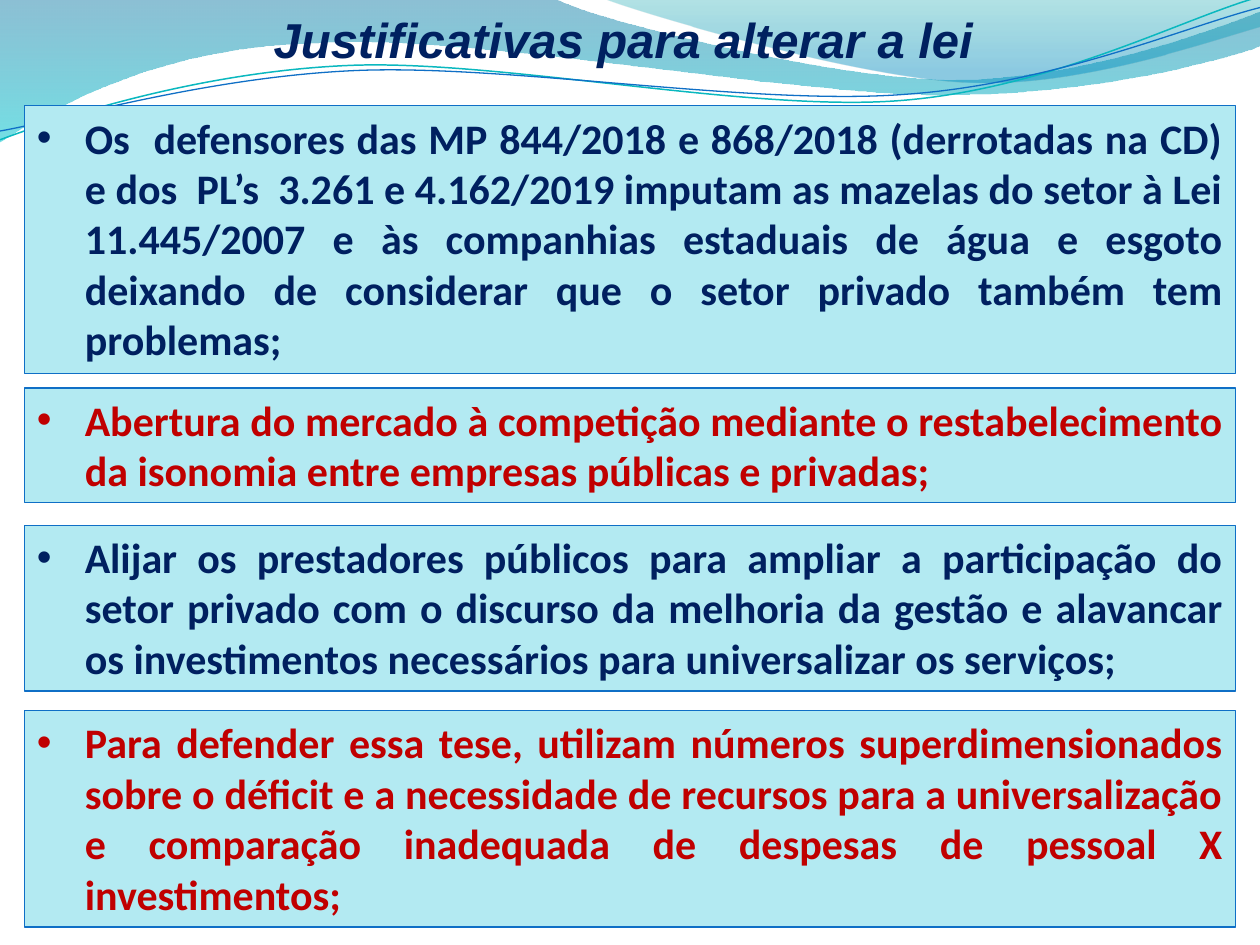
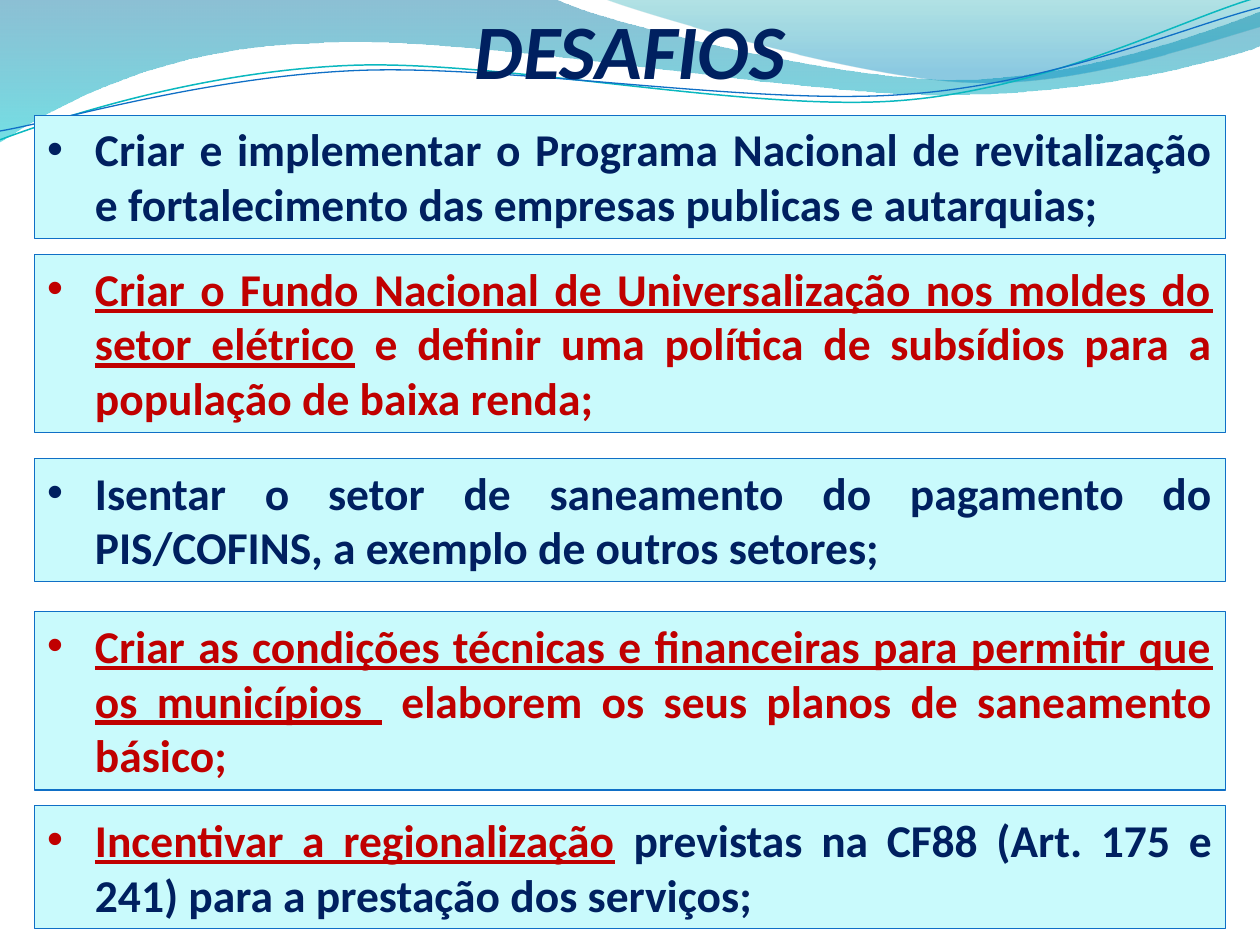
"""Build two slides on the sanitation law: reasons for change and challenges."""
from lxml.etree import SubElement as Sub
from pptx import Presentation
from pptx.dml.color import RGBColor as Rgb
from pptx.enum.shapes import MSO_SHAPE as Shape
from pptx.enum.text import MSO_ANCHOR as Anchor, MSO_AUTO_SIZE as Auto, PP_ALIGN as Align
from pptx.oxml.ns import qn
from pptx.util import Inches, Pt

COLS, ROWS = 100, 75
CELL = Inches(0.1)
INK = {
    "navy": "002060", "red": "C00000", "edge": "0F6FC6", "teal": "0AB8BF",
    "aqua": "B3EAF2", "ice": "C9FAFC", "deep": "0074A1", "cyan": "00C6CF",
    "sea": "00A1A9", "sky": "008BBF",
}
BANDS = [
    ([(0, 0), (44, -0.1), (47.6, 1.7, 66.4, 6.3, 75.8, 6.3),
      (85.3, 6.3, 95.8, 2.6, 100, 0.9), (100.1, 3.6),
      (98.3, 4.4, 87, 7.6, 74.6, 7.5), (62.2, 7.5, 38.2, 2.8, 25.7, 3.4),
      (12.9, 3.6, 4.6, 8.3, -0.1, 11.3)],
     [("deep", 45, 0), ("cyan", 55, 100)]),
    ([(47.9, -0.1), (50.9, 1.1, 68.2, 6.2, 76.9, 6.5),
      (85.6, 6.9, 96.1, 3.2, 100, 2.1), (100, 0)],
     [("sea", 30, 0), ("sky", 45, 80)]),
]
WAVES = [
    ([(0, 11.1), (4.8, 9.3, 15.8, 5.7, 27.7, 5.2),
      (39.5, 4.7, 59.3, 8.9, 71.3, 8), (83.3, 7.1, 93.8, 1.5, 99.8, -0.2)],
     "teal", 0.85),
    ([(0, 10.4), (4.7, 9.6, 16.4, 6.1, 28.3, 5.6),
      (40.3, 5.1, 59.7, 8.4, 71.7, 7.5), (83.6, 6.7, 94.1, 2.1, 100, 0.6)],
     "edge", 0.75),
]
CAUSES = [
    (8.4, 5, [("Os  defensores das MP 844/2018 e 868/2018 (derrotadas na CD) e dos  "
               "PL’s  3.261 e 4.162/2019 imputam as mazelas do setor à Lei 11.445/2007 "
               "e às companhias estaduais de água e esgoto deixando de considerar que "
               "o setor privado também tem problemas; ", "navy", False)]),
    (30.8, 2, [("Abertura do mercado à competição mediante o restabelecimento da "
                "isonomia entre empresas públicas e privadas;", "red", False)]),
    (41.7, 3, [("Alijar os prestadores públicos para ampliar a participação do setor "
                "privado com o discurso da melhoria da gestão e alavancar os "
                "investimentos necessários para universalizar os serviços;", "navy", False)]),
    (56.4, 4, [("Para defender essa tese, utilizam números superdimensionados sobre o "
                "déficit e a necessidade de recursos para a universalização e comparação "
                "inadequada de despesas de pessoal X investimentos;", "red", False)]),
]
GOALS = [
    (9.15, 2, [("Criar e implementar o Programa Nacional de revitalização e "
                "fortalecimento das empresas publicas e autarquias;", "navy", False)]),
    (20.2, 3, [("Criar o Fundo Nacional de Universalização nos moldes do setor elétrico",
                "red", True),
               (" e definir uma política de subsídios para a população de baixa renda;",
                "red", False)]),
    (36.4, 2, [("Isentar o setor de saneamento do pagamento do PIS/COFINS, a exemplo de "
                "outros setores;", "navy", False)]),
    (48.55, 3, [("Criar as condições técnicas e financeiras para permitir que os "
                 "municípios ", "red", True),
                (" elaborem os seus planos de saneamento básico;", "red", False)]),
    (63.95, 2, [("Incentivar a regionalização", "red", True),
                (" previstas na CF88 (Art. 175 e 241) para a prestação dos serviços;",
                 "navy", False)]),
]


def ink(name):
    """Return the named colour."""
    return Rgb.from_string(INK[name])


def grid(*cells):
    """Turn grid cells into slide lengths."""
    return [round(cell * CELL) for cell in cells]


def outline(slide, path, close):
    """Draw a freeform of straight lines and cubic curves."""
    start, *parts = path
    dots = [grid(*part[at:at + 2]) for part in parts for at in range(0, len(part), 2)]
    pen = slide.shapes.build_freeform(*grid(*start), scale=1.0)
    pen.add_line_segments(dots, close=close)
    form = pen.convert_to_shape()
    form.shadow.inherit = False
    lines = iter(list(form._element.iter(qn("a:lnTo"))))
    for part in parts:
        line = next(lines)
        if len(part) == 6:
            line.tag = qn("a:cubicBezTo")
            for _ in range(2):
                more = next(lines)
                line.append(more[0])
                more.getparent().remove(more)
    return form


def band(slide, path, stops):
    """Draw a see-through band that fades downwards."""
    form = outline(slide, path, True)
    form.line.fill.background()
    form.fill.gradient()
    form.fill.gradient_angle = 270
    for stop, (name, _, _) in zip(form.fill.gradient_stops, stops):
        stop.color.rgb = ink(name)
    marks = form._element.iter(qn("a:gs"))
    for mark, (_, alpha, place) in zip(marks, stops):
        mark.set("pos", str(place * 1000))
        Sub(mark[0], qn("a:alpha"), val=str(alpha * 1000))


def stroke(form, name, width):
    """Set the line of a shape."""
    form.line.color.rgb = ink(name)
    form.line.width = Pt(width)


def wave(slide, path, name, width):
    """Draw a thin open curve."""
    form = outline(slide, path, False)
    form.fill.background()
    stroke(form, name, width)


def share(slide):
    """Draw the bands and waves once and hand them to the layout."""
    layout = slide.slide_layout
    for old in list(layout.placeholders):
        old._element.getparent().remove(old._element)
    for path, stops in BANDS:
        band(slide, path, stops)
    for path, name, width in WAVES:
        wave(slide, path, name, width)
    for form in list(slide.shapes):
        layout.shapes._spTree.append(form._element)


def add_run(para, text, size, name, face="Calibri"):
    """Add a bold run and return its font."""
    run = para.add_run()
    run.text = text
    font = run.font
    font.name, font.size, font.bold = face, Pt(size), True
    font.color.rgb = ink(name)
    return font


def title(slide, text, left, high, size, face, anchor, space):
    """Write the centred slide title."""
    box = slide.shapes.add_textbox(*grid(left, -0.3, COLS - 2 * left, high))
    frame = box.text_frame
    frame.word_wrap = True
    frame.vertical_anchor = anchor
    para = frame.paragraphs[0]
    para.alignment = Align.CENTER
    para.line_spacing = space
    add_run(para, text, size, "navy", face).italic = True


def bullet(para):
    """Give a paragraph a hanging dot."""
    props = para._p.get_or_add_pPr()
    props.set("marL", str(Inches(0.38)))
    props.set("indent", str(-Inches(0.38)))
    Sub(props, qn("a:buFont"), typeface="Arial")
    Sub(props, qn("a:buChar"), char="•")


def card(slide, left, top, lines, size, fill, runs):
    """Draw a framed box with one justified point."""
    high = 1 + lines * size / 5.93
    box = slide.shapes.add_shape(
        Shape.RECTANGLE, *grid(left, top, COLS - 2 * left, high))
    box.shadow.inherit = False
    box.fill.solid()
    box.fill.fore_color.rgb = ink(fill)
    stroke(box, "edge", 0.75)
    frame = box.text_frame
    frame.word_wrap = True
    frame.auto_size = Auto.SHAPE_TO_FIT_TEXT
    frame.vertical_anchor = Anchor.TOP
    para = frame.paragraphs[0]
    para.alignment = Align.JUSTIFY
    bullet(para)
    for text, name, under in runs:
        add_run(para, text, size, name).underline = under


def stack(slide, left, size, fill, cards):
    """Draw the cards of a slide."""
    for top, lines, runs in cards:
        card(slide, left, top, lines, size, fill, runs)


def main():
    """Build and save the deck."""
    deck = Presentation()
    deck.slide_width, deck.slide_height = grid(COLS, ROWS)
    blank = deck.slide_layouts[6]
    first, second = [deck.slides.add_slide(blank) for _ in range(2)]
    share(first)
    stack(first, 1.95, 24, "aqua", CAUSES)
    title(first, "Justificativas para alterar a lei ", 1.95, 6.3, 28, "Arial",
          Anchor.BOTTOM, 0.9)
    title(second, "DESAFIOS", 2.75, 8.4, 44, "Calibri", Anchor.TOP, 1.0)
    stack(second, 2.75, 26, "ice", GOALS)
    deck.save("out.pptx")


if __name__ == "__main__":
    main()
